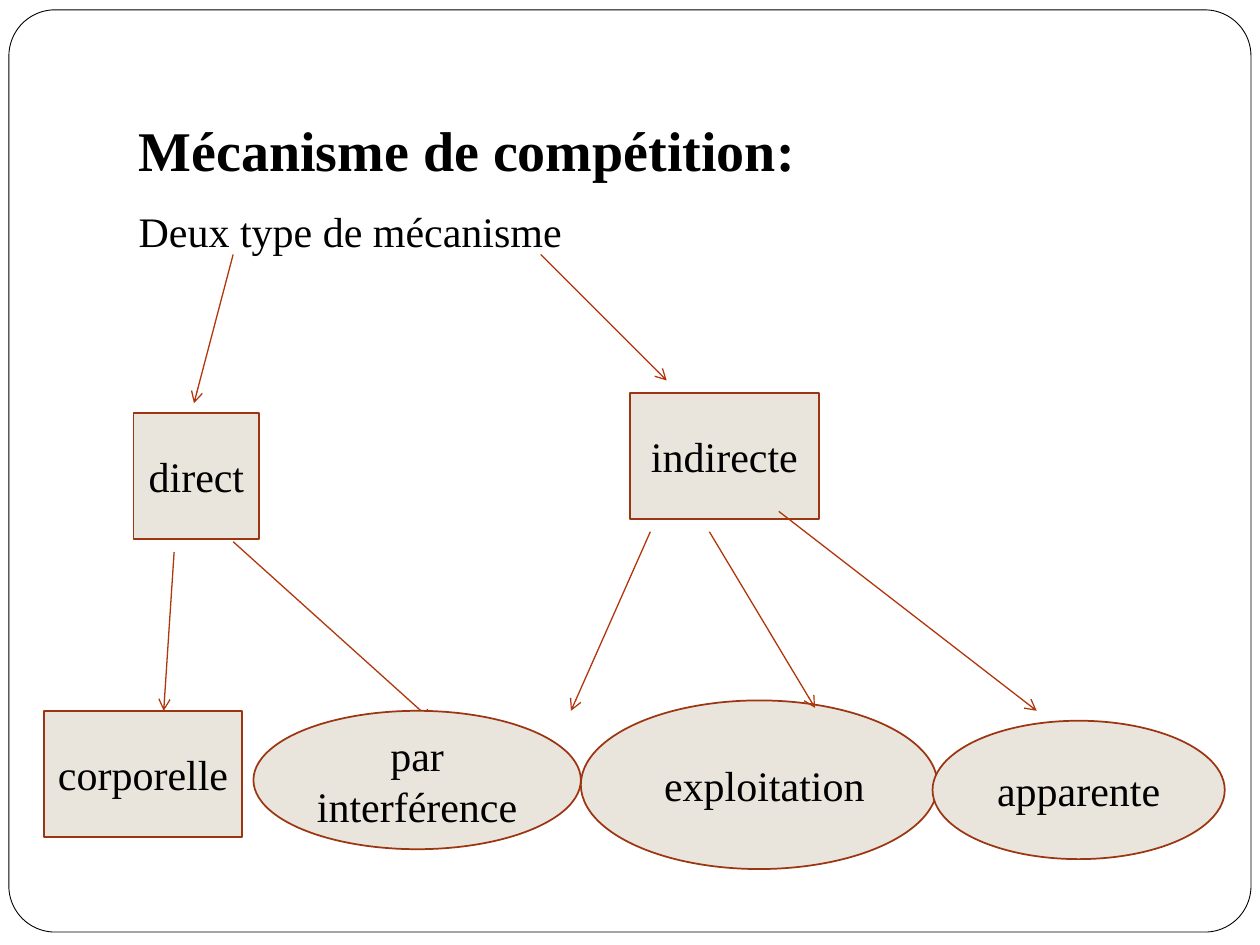
from pptx import Presentation
from pptx import util as u
from pptx.dml.color import RGBColor
from pptx.enum import shapes, text
from pptx.oxml.ns import qn
from lxml import etree

COLOURS = {"ink": "000000", "paper": "FFFFFF", "node": "E9E5DC",
           "outline": "9C3511", "arrow": "B1360B"}
FONT = "Times New Roman"
RECT, OVAL = shapes.MSO_SHAPE.RECTANGLE, shapes.MSO_SHAPE.OVAL


def colour(name):
    return RGBColor.from_string(COLOURS[name])


def lengths(*values):
    return [u.Cm(value) for value in values]


def set_font(para, size, bold=False):
    para.font.name, para.font.size, para.font.bold = FONT, u.Pt(size), bold
    para.font.color.rgb = colour("ink")


def add_box(page, kind, box, fill, line, weight):
    shape = page.shapes.add_shape(kind, *lengths(*box))
    shape.shadow.inherit = False
    shape.fill.solid()
    shape.fill.fore_color.rgb = colour(fill)
    shape.line.color.rgb = colour(line)
    shape.line.width = u.Pt(weight)
    return shape


def add_frame(page, box):
    frame = add_box(page, shapes.MSO_SHAPE.ROUNDED_RECTANGLE, box, "paper", "ink", 0.5)
    frame.adjustments[0] = 0.05
    # Behind the placeholders
    page.shapes._spTree.insert(2, frame._element)


def fill_placeholder(holder, box, words, size, anchor, bold=False):
    holder.left, holder.top, holder.width, holder.height = lengths(*box)
    frame = holder.text_frame
    frame.text = words
    frame.auto_size = text.MSO_AUTO_SIZE.NONE
    frame.vertical_anchor = anchor
    para = frame.paragraphs[0]
    para.alignment = text.PP_ALIGN.LEFT
    set_font(para, size, bold)
    return para


def add_heading(page, box):
    left, top, width, height = box
    title, body = page.placeholders
    fill_placeholder(title, (left, top, width, 3.18), "Mécanisme de compétition:",
                     32, text.MSO_ANCHOR.BOTTOM, True)
    title.text_frame.margin_bottom = u.Cm(0.25)
    para = fill_placeholder(body, (left, top + 3.25, width, height - 3.25),
                            "Deux type de mécanisme", 24, text.MSO_ANCHOR.TOP)
    para.space_before = u.Pt(5.8)
    props = para._p.get_or_add_pPr()
    props.set("marL", "0")
    props.set("indent", "0")
    bullet = etree.Element(qn("a:buNone"))
    props.find(qn("a:spcBef")).addnext(bullet)


def add_node(page, origin, kind, words, left, top, width, height):
    box = (origin[0] + left, origin[1] + top, width, height)
    node = add_box(page, kind, box, "node", "outline", 1)
    frame = node.text_frame
    frame.text = words
    frame.word_wrap = True
    frame.vertical_anchor = text.MSO_ANCHOR.MIDDLE
    para = frame.paragraphs[0]
    para.alignment = text.PP_ALIGN.CENTER
    set_font(para, 24)


def add_arrow(page, origin, x1, y1, x2, y2):
    x, y = origin
    arrow = page.shapes.add_connector(shapes.MSO_CONNECTOR.STRAIGHT,
                                      *lengths(x + x1, y + y1, x + x2, y + y2))
    arrow.line.color.rgb = colour("arrow")
    arrow.line.width = u.Pt(0.75)
    etree.SubElement(arrow.line._get_or_add_ln(), qn("a:tailEnd"), type="arrow")
    etree.SubElement(arrow._element.spPr, qn("a:effectLst"))


def add_branch(page, origin, nodes, arrows, arrows_on_top):
    steps = [(add_node, nodes), (add_arrow, arrows)]
    for add, items in steps if arrows_on_top else reversed(steps):
        for item in items:
            add(page, origin, *item)


def main():
    deck = Presentation()
    deck.slide_width, deck.slide_height = lengths(25.4, 19.05)
    page = deck.slides.add_slide(deck.slide_layouts[1])

    add_frame(page, (0.18, 0.2, 25.04, 18.59))
    add_heading(page, (2.54, 0.76, 21.59, 15.95))

    # Direct mechanisms
    add_branch(page, (0.89, 5.13),
               [(RECT, "direct", 1.8, 3.2, 2.54, 2.54),
                (RECT, "corporelle", 0, 9.2, 3.99, 2.54),
                (OVAL, "par interférence", 4.22, 9.2, 6.6, 2.79)],
               [(3.81, 0, 3.02, 3),
                (2.62, 6, 2.41, 9.2),
                (3.81, 5.79, 7.82, 9.4)], arrows_on_top=False)

    # Indirect mechanisms
    add_branch(page, (10.9, 5.13),
               [(RECT, "indirecte", 1.8, 2.79, 3.81, 2.54),
                (OVAL, " exploitation", 0.81, 8.99, 7.19, 3.4),
                (OVAL, "apparente", 7.9, 9.4, 5.89, 2.79)],
               [(0, 0, 2.54, 2.54),
                (4.8, 5.18, 10, 9.2),
                (3.4, 5.59, 5.53, 9.14),
                (2.21, 5.59, 0.61, 9.2)], arrows_on_top=True)

    deck.save("out.pptx")


if __name__ == "__main__":
    main()
